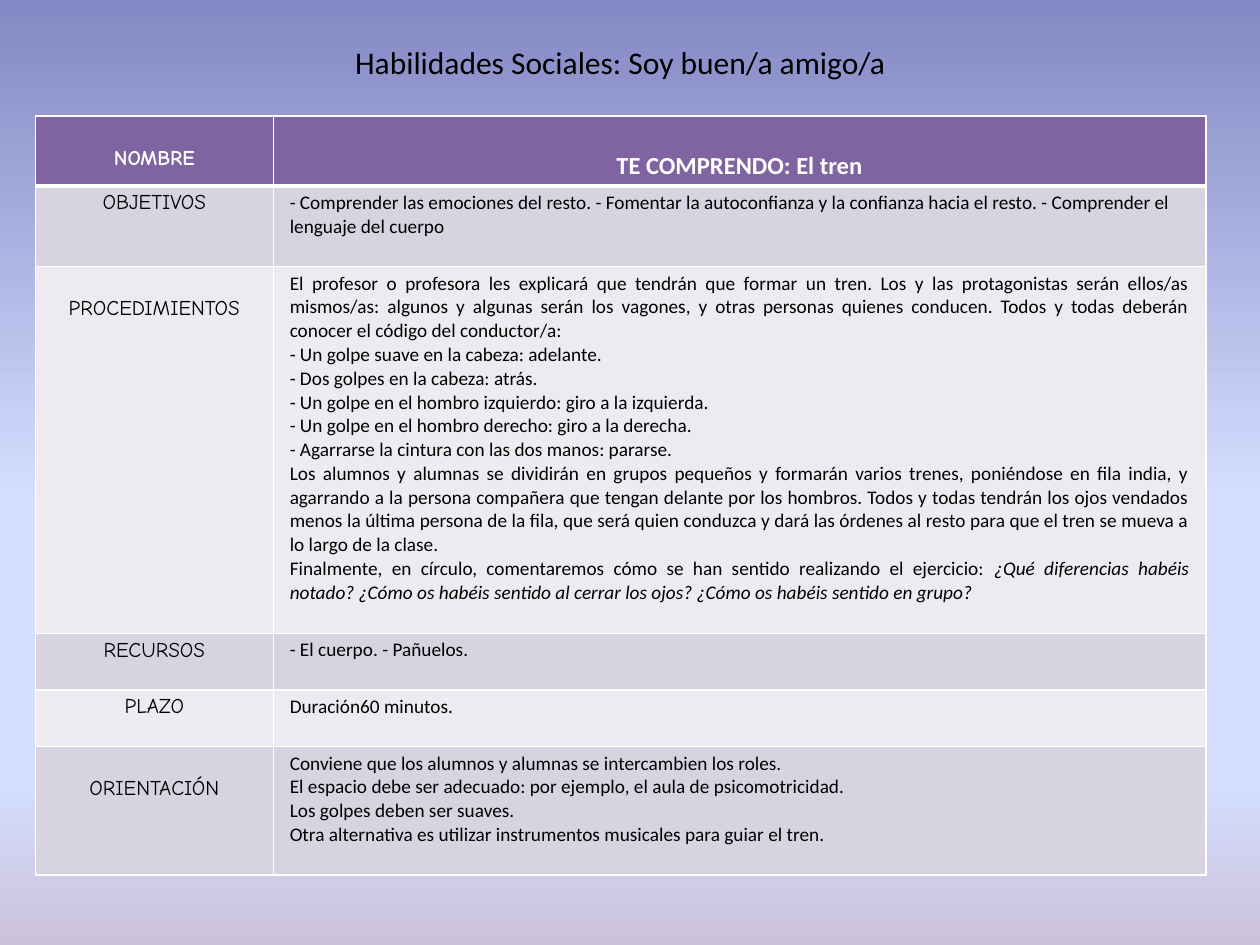
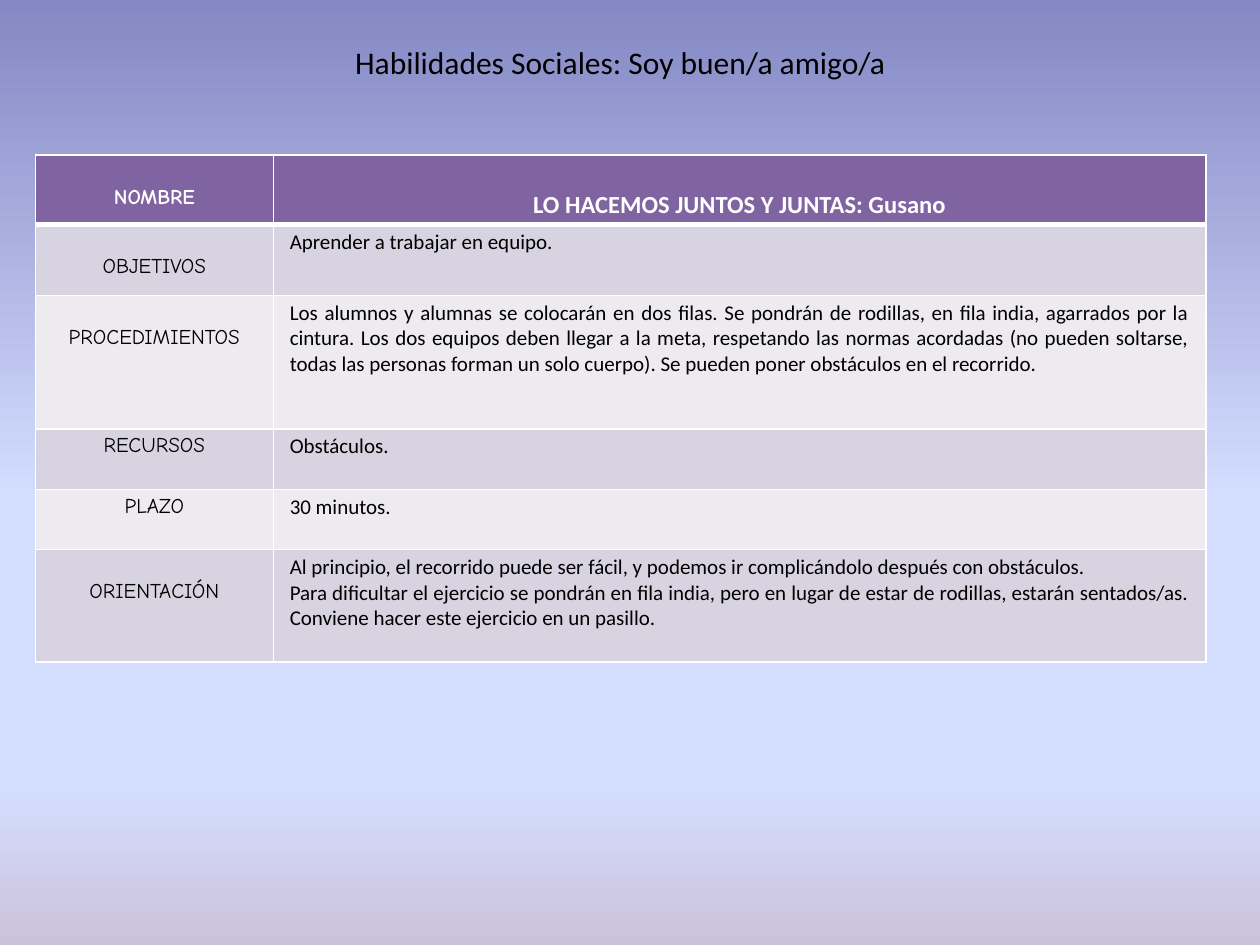
from lxml.etree import SubElement
from pptx import Presentation
from pptx.dml.color import RGBColor
from pptx.enum.text import MSO_AUTO_SIZE, PP_ALIGN
from pptx.oxml.ns import qn
from pptx.util import Inches, Pt

COLORS = {
    "header": "8064A2",
    "band_dark": "D8D3E0",
    "band_light": "EDEAF0",
    "border": "FFFFFF",
    "header_text": "FFFFFF",
    "text": "000000",
}
BACKGROUND_STOPS = [(0, "8488C4"), (53, "D4DEFF"), (83, "D4DEFF"), (100, "CCC1DA")]
TITLE = "Habilidades Sociales: Soy buen/a amigo/a"
LABELS = ["NOMBRE", "OBJETIVOS", "PROCEDIMIENTOS", "RECURSOS", "PLAZO", "ORIENTACIÓN"]
LABEL_FONT, BODY_FONT = "Comic Neue", "Calibri"
MARGIN, LABEL_DROP, HEADING_DROP = 0.04, 0.2, 0.24
LEFT, JUSTIFY = PP_ALIGN.LEFT, PP_ALIGN.JUSTIFY

ACTIVITIES = [
    {
        "top": 0.92,
        "row_heights": [0.54, 0.64, 2.91, 0.45, 0.45, 1.02],
        "lowered_labels": {"NOMBRE", "PROCEDIMIENTOS", "ORIENTACIÓN"},
        "body_size": 11,
        "alignments": [PP_ALIGN.CENTER, LEFT, JUSTIFY, LEFT, LEFT, LEFT],
        "contents": [
            ["TE COMPRENDO: El tren"],
            ["- Comprender las emociones del resto. - Fomentar la autoconfianza y la confianza "
             "hacia el resto. - Comprender el lenguaje del cuerpo"],
            ["El profesor o profesora les explicará que tendrán que formar un tren. Los y las "
             "protagonistas serán ellos/as mismos/as: algunos y algunas serán los vagones, y otras "
             "personas quienes conducen. Todos y todas deberán conocer el código del conductor/a:",
             "- Un golpe suave en la cabeza: adelante.",
             "- Dos golpes en la cabeza: atrás.",
             "- Un golpe en el hombro izquierdo: giro a la izquierda.",
             "- Un golpe en el hombro derecho: giro a la derecha.",
             "- Agarrarse la cintura con las dos manos: pararse.",
             "Los alumnos y alumnas se dividirán en grupos pequeños y formarán varios trenes, "
             "poniéndose en fila india, y agarrando a la persona compañera que tengan delante por "
             "los hombros. Todos y todas tendrán los ojos vendados menos la última persona de la "
             "fila, que será quien conduzca y dará las órdenes al resto para que el tren se mueva "
             "a lo largo de la clase.",
             "Finalmente, en círculo, comentaremos cómo se han sentido realizando el ejercicio: "],
            ["- El cuerpo. - Pañuelos."],
            ["Duración60 minutos."],
            ["Conviene que los alumnos y alumnas se intercambien los roles.",
             "El espacio debe ser adecuado: por ejemplo, el aula de psicomotricidad.",
             "Los golpes deben ser suaves.",
             "Otra alternativa es utilizar instrumentos musicales para guiar el tren."],
        ],
        "closing_questions": "¿Qué diferencias habéis notado? ¿Cómo os habéis sentido al cerrar "
                             "los ojos? ¿Cómo os habéis sentido en grupo?",
    },
    {
        "top": 1.23,
        "row_heights": [0.54, 0.56, 1.06, 0.48, 0.48, 0.89],
        "lowered_labels": {"NOMBRE", "OBJETIVOS", "PROCEDIMIENTOS", "ORIENTACIÓN"},
        "body_size": 12,
        "alignments": [PP_ALIGN.CENTER] + [JUSTIFY] * 5,
        "contents": [
            ["LO HACEMOS JUNTOS Y JUNTAS: Gusano"],
            ["Aprender a trabajar en equipo."],
            ["Los alumnos y alumnas se colocarán en dos filas. Se pondrán de rodillas, en fila "
             "india, agarrados por la cintura. Los dos equipos deben llegar a la meta, respetando "
             "las normas acordadas (no pueden soltarse, todas las personas forman un solo cuerpo). "
             "Se pueden poner obstáculos en el recorrido."],
            ["Obstáculos."],
            ["30 minutos."],
            ["Al principio, el recorrido puede ser fácil, y podemos ir complicándolo después con "
             "obstáculos.",
             "Para dificultar el ejercicio se pondrán en fila india, pero en lugar de estar de "
             "rodillas, estarán sentados/as. Conviene hacer este ejercicio en un pasillo."],
        ],
        "closing_questions": None,
    },
]


def format_text(text_frame, font_name, size, color, alignment, bold=False):
    for paragraph in text_frame.paragraphs:
        paragraph.alignment = alignment
        for run in paragraph.runs:
            run.font.name = font_name
            run.font.size = Pt(size)
            run.font.bold = bold
            run.font.color.rgb = RGBColor.from_string(color)


def style_cell(cell, row, drop):
    """Set borders, band fill and margins; drop lowers the text below the top margin."""
    properties = cell._tc.get_or_add_tcPr()
    widths = {"lnL": 1, "lnR": 1, "lnT": 3 if row == 1 else 1, "lnB": 3 if row == 0 else 1}
    for tag, width in widths.items():
        line = SubElement(properties, qn(f"a:{tag}"), w=str(Pt(width)))
        fill = SubElement(line, qn("a:solidFill"))
        SubElement(fill, qn("a:srgbClr"), val=COLORS["border"])
    band = "header" if row == 0 else "band_dark" if row % 2 else "band_light"
    cell.fill.solid()
    cell.fill.fore_color.rgb = RGBColor.from_string(COLORS[band])
    cell.margin_left = cell.margin_right = Inches(0.13)
    cell.margin_top = Inches(MARGIN + drop)
    cell.margin_bottom = Inches(MARGIN)


presentation = Presentation()
presentation.slide_width = Inches(10)
presentation.slide_height = Inches(7.5)

for activity in ACTIVITIES:
    slide = presentation.slides.add_slide(presentation.slide_layouts[6])

    background_fill = slide.background.fill
    background_fill.gradient()
    background_fill.gradient_angle = 270
    stops = slide._element.find(".//" + qn("a:gsLst"))
    stops.clear()
    for position, color in BACKGROUND_STOPS:
        stop = SubElement(stops, qn("a:gs"), pos=str(position * 1000))
        SubElement(stop, qn("a:srgbClr"), val=color)

    row_heights = activity["row_heights"]
    table = slide.shapes.add_table(
        len(LABELS), 2, Inches(0.28), Inches(activity["top"]), Inches(9.29), Inches(sum(row_heights))
    ).table
    table.columns[0].width = Inches(1.89)
    table.columns[1].width = Inches(7.4)

    for row, (label, content) in enumerate(zip(LABELS, activity["contents"])):
        table.rows[row].height = Inches(row_heights[row])
        label_cell, content_cell = table.cell(row, 0), table.cell(row, 1)
        is_header = row == 0
        text_color = COLORS["header_text" if is_header else "text"]

        style_cell(label_cell, row, LABEL_DROP if label in activity["lowered_labels"] else 0)
        label_cell.text_frame.text = label
        format_text(label_cell.text_frame, LABEL_FONT, 12, text_color, PP_ALIGN.CENTER, is_header)

        style_cell(content_cell, row, HEADING_DROP if is_header else 0)
        content_frame = content_cell.text_frame
        content_frame.text = "\n".join(content)
        if label == "PROCEDIMIENTOS" and activity["closing_questions"]:
            questions = content_frame.paragraphs[-1].add_run()
            questions.text = activity["closing_questions"]
            questions.font.italic = True
        size = 14 if is_header else activity["body_size"]
        format_text(content_frame, BODY_FONT, size, text_color, activity["alignments"][row], is_header)

    title_box = slide.shapes.add_textbox(Inches(2.72), Inches(0.29), Inches(4.8), Inches(0.4))
    title_box.text_frame.word_wrap = True
    title_box.text_frame.auto_size = MSO_AUTO_SIZE.SHAPE_TO_FIT_TEXT
    title_box.text_frame.text = TITLE
    format_text(title_box.text_frame, BODY_FONT, 18, COLORS["text"], LEFT)

presentation.save("out.pptx")
